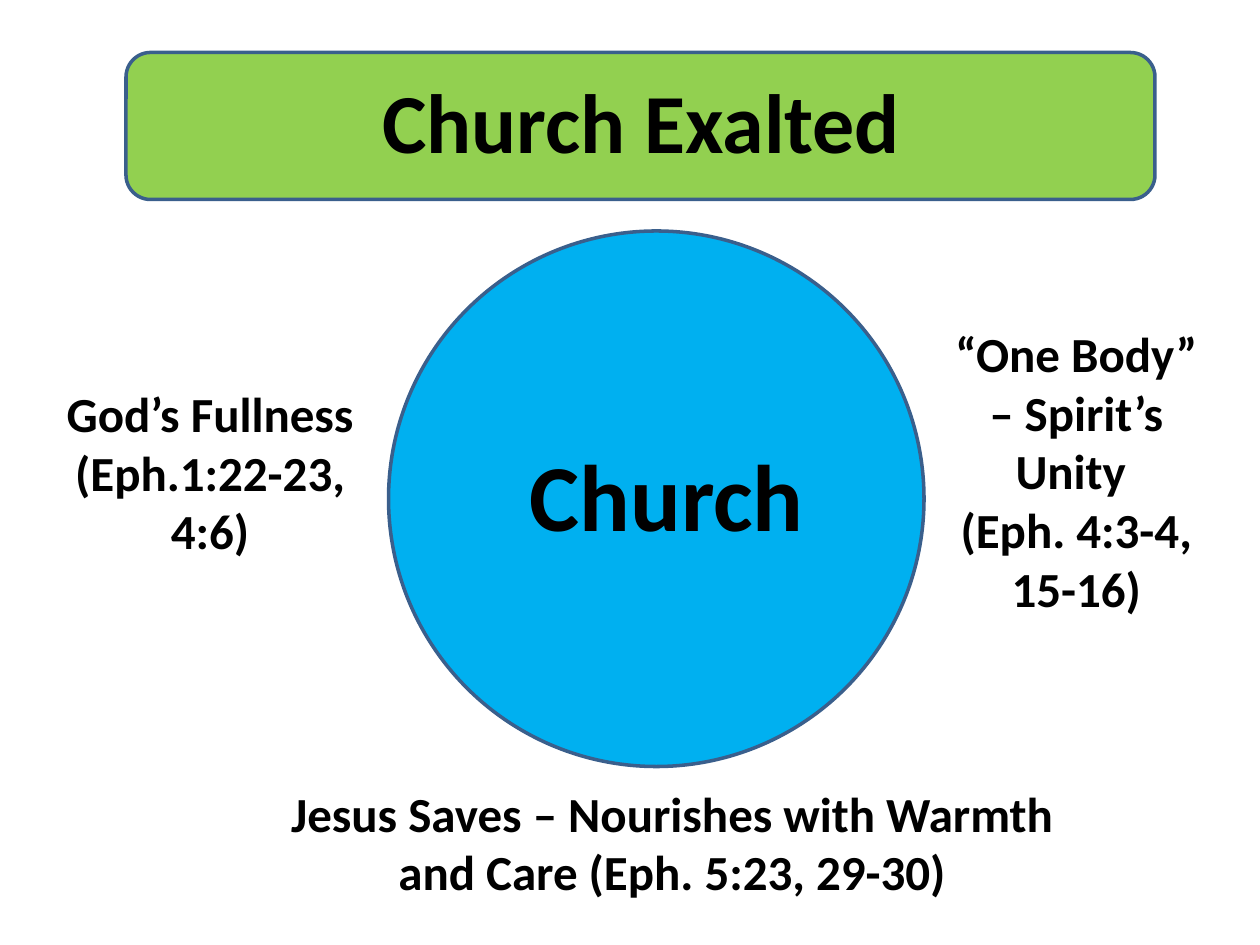
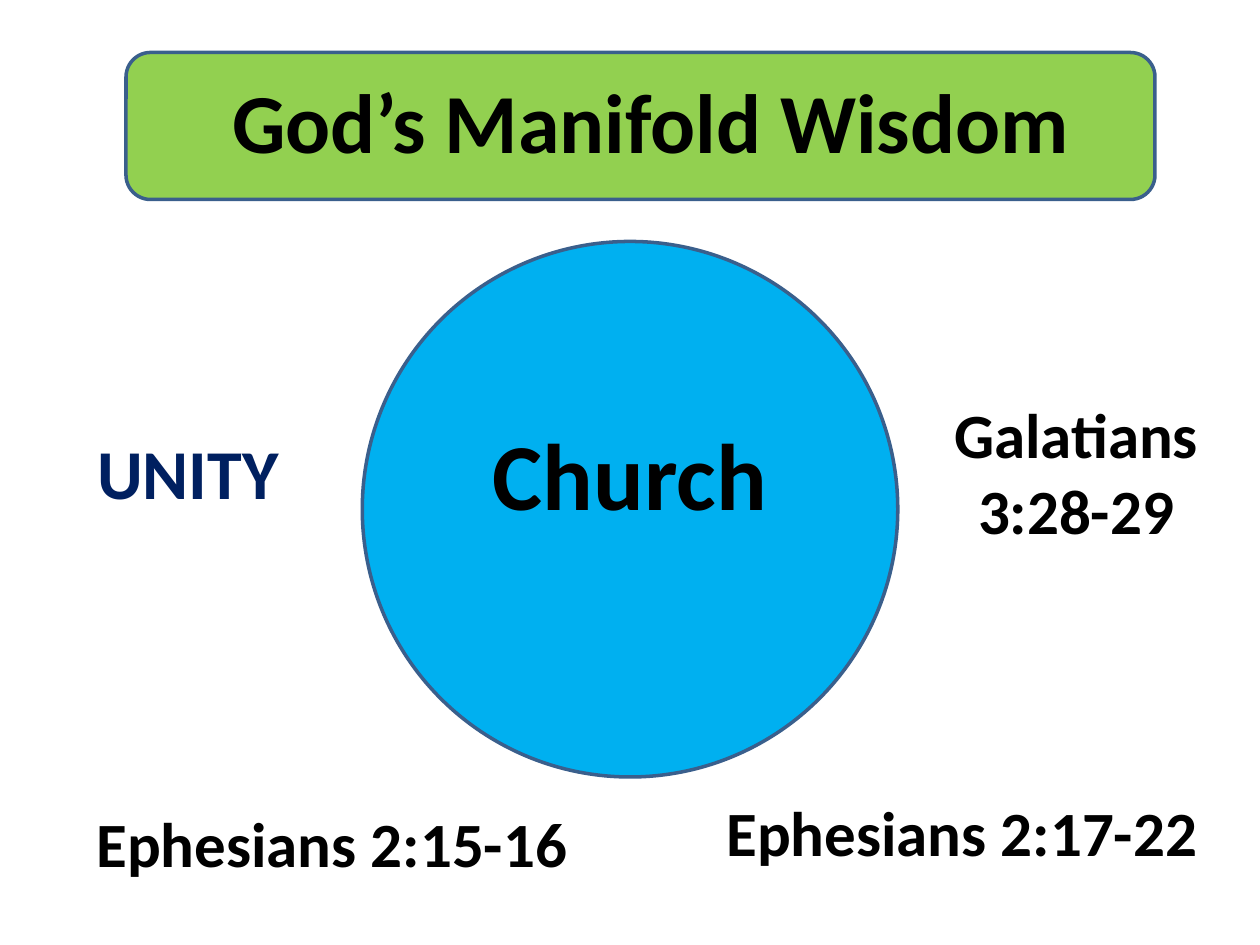
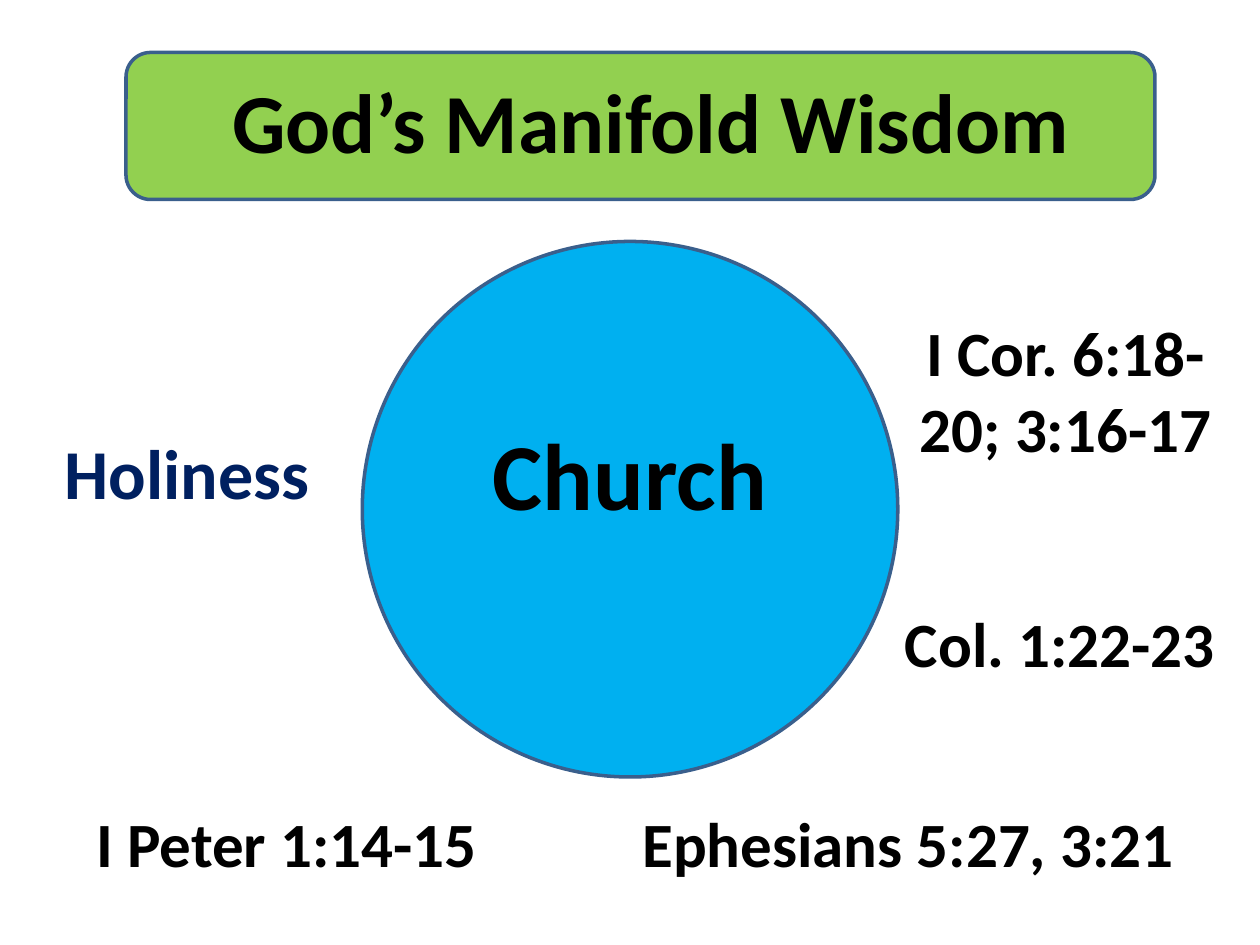
from pptx import Presentation
from pptx.dml.color import RGBColor
from pptx.enum.shapes import MSO_SHAPE as Form
from pptx.enum.text import MSO_AUTO_SIZE as Fit, PP_ALIGN as Align
from pptx.util import Inches, Pt

BLACK = RGBColor(0x00, 0x00, 0x00)
NAVY = RGBColor(0x00, 0x20, 0x60)
SKY = RGBColor(0x00, 0xB0, 0xF0)
GREEN = RGBColor(0x92, 0xD0, 0x50)
EDGE = RGBColor(0x3A, 0x5F, 0x8C)
MID, LEFT = Align.CENTER, Align.LEFT

# Grid of 120 columns by 90 rows
deck = Presentation()
deck.slide_width, deck.slide_height = Inches(10), Inches(7.5)
COL, ROW = deck.slide_width / 120, deck.slide_height / 90


def add_form(page, kind, fill, x, y, w, h):
    form = page.shapes.add_shape(
        kind, round(x * COL), round(y * ROW), round(w * COL), round(h * ROW))
    form.shadow.inherit = False
    form.fill.solid()
    form.fill.fore_color.rgb = fill
    form.line.color.rgb = EDGE
    form.line.width = Pt(2)


def add_text(page, text, size, x, y, w, h, align=MID, color=BLACK, wrap=True):
    box = page.shapes.add_textbox(
        round(x * COL), round(y * ROW), round(w * COL), round(h * ROW))
    frame = box.text_frame
    frame.word_wrap = wrap
    frame.auto_size = Fit.SHAPE_TO_FIT_TEXT
    para = frame.paragraphs[0]
    para.text = text
    para.alignment = align
    style = {"name": "Calibri", "size": Pt(size), "bold": True}
    for run in para.runs:
        for key, value in style.items():
            setattr(run.font, key, value)
        run.font.color.rgb = color


# Each slide: title, circle corner, label corner, notes around the circle
WISDOM = ("God’s Manifold Wisdom", (34.5, 23), (42.5, 39))
pages = [
    ("Church Exalted ", (37, 22), (46, 41), [
        ("God’s Fullness (Eph.1:22-23, 4:6)", 28, 3, 35.9, 34, 18.1),
        ("“One Body” – Spirit’s Unity \v(Eph. 4:3-4, 15-16)",
         28, 89, 30.2, 27, 29.5),
        ("Jesus Saves – Nourishes with Warmth and Care (Eph. 5:23, 29-30)",
         28, 25, 74, 78, 12.5),
    ]),
    (*WISDOM, [
        ("UNITY ", 40, 8, 40.3, 21.3, 9.2, MID, NAVY, False),
        ("Ephesians 2:15-16", 36, 8, 76, 50, 8.5, LEFT),
        ("Ephesians 2:17-22", 36, 68, 75, 50, 8.5, LEFT),
        ("Galatians 3:28-29", 36, 87, 37.1, 31, 15.7),
    ]),
    (*WISDOM, [
        ("Holiness ", 40, 4.8, 40.3, 27.5, 9.2, MID, NAVY, False),
        ("I Peter 1:14-15", 36, 8, 76, 50, 8.5, LEFT),
        ("Ephesians 5:27, 3:21", 36, 60, 76, 58, 8.5, LEFT),
        ("I Cor. 6:18-20; 3:16-17", 36, 86, 29.3, 31, 15.7),
        ("Col. 1:22-23", 36, 85, 57, 33, 8.5, LEFT),
    ]),
]

for title, disc, label, notes in pages:
    page = deck.slides.add_slide(deck.slide_layouts[6])
    # Circle with its label
    add_form(page, Form.OVAL, SKY, *disc, 51, 51)
    add_text(page, "Church", 54, *label, 35, 12.1)
    # Title band
    add_form(page, Form.ROUNDED_RECTANGLE, GREEN, 12, 5, 98, 14)
    add_text(page, title, 48, 17, 6, 90, 10.9)
    # Notes
    for note in notes:
        add_text(page, *note)

deck.save("out.pptx")
